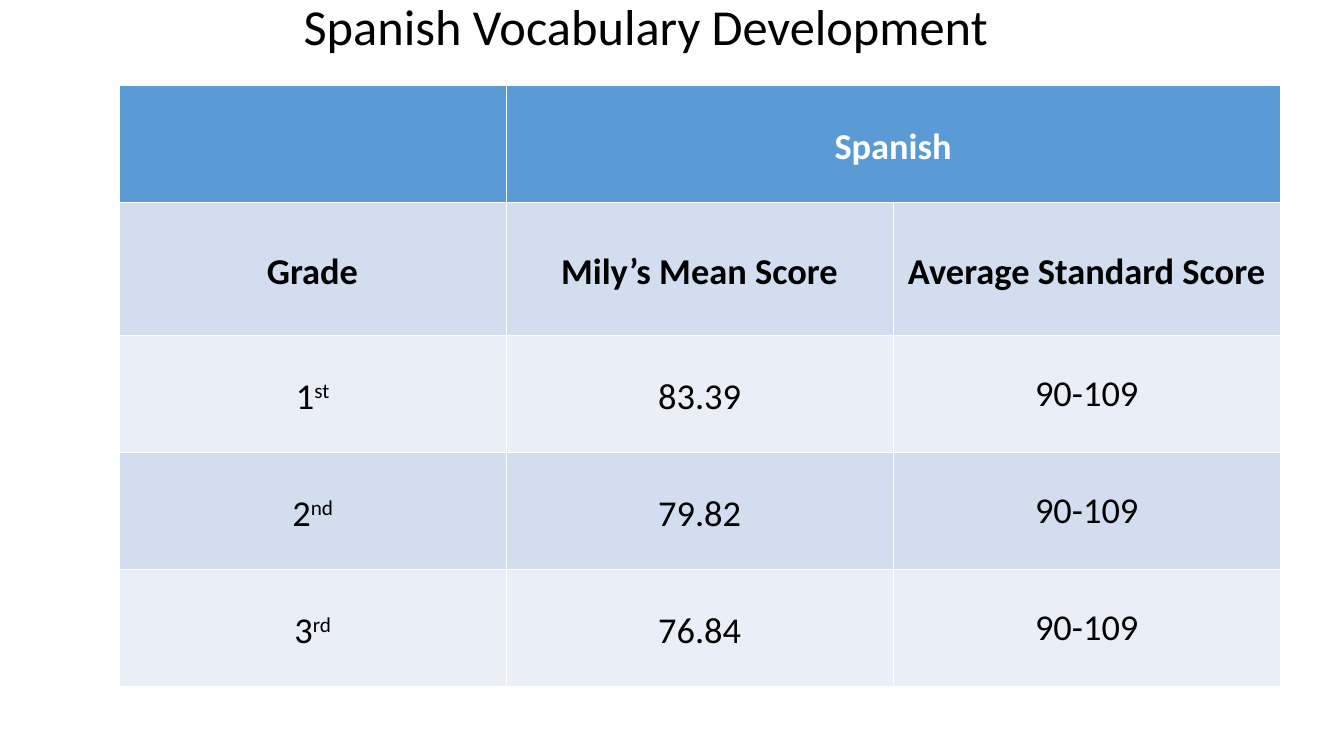
from lxml import etree
from pptx import Presentation
from pptx.dml.color import RGBColor
from pptx.enum.text import MSO_ANCHOR, MSO_AUTO_SIZE, PP_ALIGN
from pptx.oxml.ns import qn
from pptx.util import Inches, Pt

CENTER = PP_ALIGN.CENTER
MIDDLE = MSO_ANCHOR.MIDDLE
NO_FIT = MSO_AUTO_SIZE.NONE
FONT = "Calibri"
BLACK, WHITE = "000000", "FFFFFF"
HEADER, DARK_BAND, LIGHT_BAND = "5B9BD5", "D2DEEF", "EAEFF7"
COL_WIDTH = 3.84
ROW_HEIGHTS = [1.16, 1.32, 1.16, 1.16, 1.16]
ROWS = [
    ["", "Spanish", ""],
    ["Grade", "Mily’s Mean Score", "Average Standard Score"],
    ["1st", "83.39", "90-109"],
    ["2nd", "79.82", "90-109"],
    ["3rd", "76.84", "90-109"],
]


def rgb(value):
    """Return the colour for a hex string."""
    return RGBColor.from_string(value)


def format_run(r, size, color, bold=False):
    """Set the font of one run."""
    r.font.name = FONT
    r.font.size = Pt(size)
    r.font.bold = bold
    r.font.color.rgb = rgb(color)


def add_title(slide, left, top, width, height):
    """Place and fill the title placeholder."""
    sp = slide.shapes.title
    sp.left, sp.top = Inches(left), Inches(top)
    sp.width, sp.height = Inches(width), Inches(height)
    tf = sp.text_frame
    tf.text = "Spanish Vocabulary Development"
    tf.word_wrap = True
    tf.auto_size = NO_FIT
    tf.vertical_anchor = MIDDLE
    p = tf.paragraphs[0]
    p.alignment = CENTER
    p.line_spacing = 0.9
    format_run(p.runs[0], 36, BLACK)


def add_borders(cell, color, width):
    """Draw a solid line on all four sides of a cell."""
    tc_pr = cell._tc.get_or_add_tcPr()
    for side in ("a:lnL", "a:lnR", "a:lnT", "a:lnB"):
        ln = etree.SubElement(tc_pr, qn(side), w=str(Pt(width)))
        fill = etree.SubElement(ln, qn("a:solidFill"))
        etree.SubElement(fill, qn("a:srgbClr"), val=color)


def fill_cell(cell, text, fill, color, bold, ordinal, spacing):
    """Format a cell and write its text, raising an ordinal's ending."""
    add_borders(cell, WHITE, 1)
    cell.fill.solid()
    cell.fill.fore_color.rgb = rgb(fill)
    cell.vertical_anchor = MIDDLE
    cell.margin_left = cell.margin_right = Inches(0.07)
    cell.margin_top = cell.margin_bottom = 0
    if not text:
        return
    p = cell.text_frame.paragraphs[0]
    p.text = text[:-2] if ordinal else text
    p.alignment = CENTER
    p.line_spacing = spacing
    if ordinal:
        r = p.add_run()
        r.text = text[-2:]
        r._r.get_or_add_rPr().set("baseline", "30000")
    for r in p.runs:
        format_run(r, 26, color, bold)


def add_score_table(slide, left, top):
    """Build the score table with its merged heading and banded rows."""
    cols = len(ROWS[0])
    frame = slide.shapes.add_table(
        len(ROWS), cols, Inches(left), Inches(top),
        Inches(COL_WIDTH * cols), Inches(sum(ROW_HEIGHTS)))
    table = frame.table
    for column in table.columns:
        column.width = Inches(COL_WIDTH)
    for i, values in enumerate(ROWS):
        table.rows[i].height = Inches(ROW_HEIGHTS[i])
        band = DARK_BAND if i % 2 else LIGHT_BAND
        fill, color = (band, BLACK) if i else (HEADER, WHITE)
        for j, text in enumerate(values):
            is_score = i > 1
            spacing = 1.0 if is_score and j == 2 else 1.15
            fill_cell(table.cell(i, j), text, fill, color, not is_score,
                      is_score and j == 0, spacing)
    table.cell(0, 1).merge(table.cell(0, 2))


def main():
    """Create the presentation."""
    prs = Presentation()
    prs.slide_width, prs.slide_height = Inches(13.33), Inches(7.5)
    slide = prs.slides.add_slide(prs.slide_layouts[5])
    add_title(slide, 2.32, 0.12, 8.17, 0.33)
    add_score_table(slide, 1.18, 0.85)
    prs.save("out.pptx")


if __name__ == "__main__":
    main()
